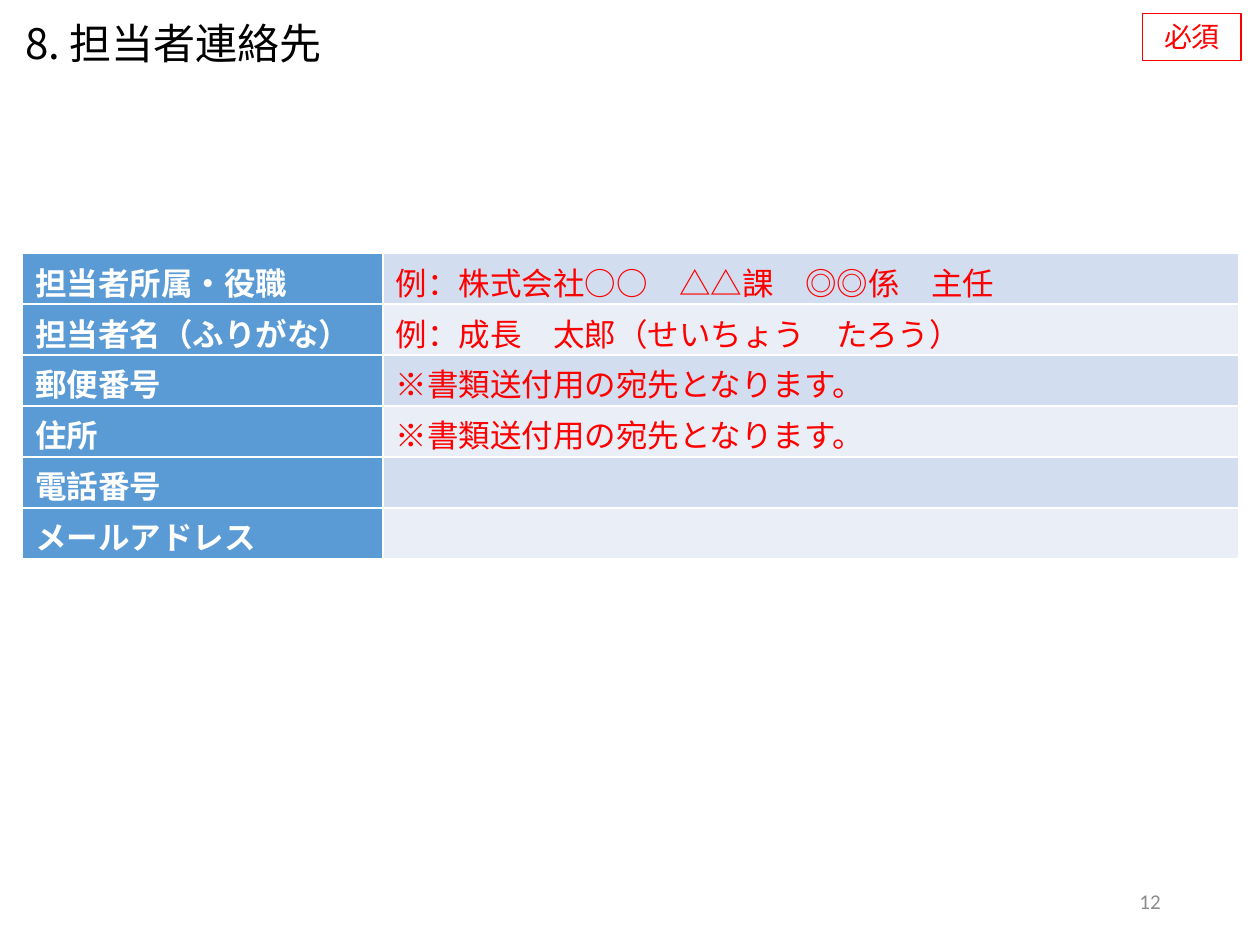
import pptx
import pptx.dml.color
import pptx.enum.shapes
import pptx.enum.text
import pptx.oxml
import pptx.oxml.ns
import pptx.util
from pptx.util import Inches

RGBColor = pptx.dml.color.RGBColor
ALIGN = pptx.enum.text.PP_ALIGN
ANCHOR = pptx.enum.text.MSO_ANCHOR
GROW = pptx.enum.text.MSO_AUTO_SIZE.SHAPE_TO_FIT_TEXT

WHITE = RGBColor(0xFF, 0xFF, 0xFF)
BLACK = RGBColor(0x00, 0x00, 0x00)
RED = RGBColor(0xFF, 0x00, 0x00)
GRAY = RGBColor(0x8C, 0x8C, 0x8C)
BLUE = RGBColor(0x5B, 0x9B, 0xD5)
BANDS = [RGBColor(0xD2, 0xDE, 0xEF), RGBColor(0xEA, 0xEF, 0xF7)]
JAPANESE = "Noto Sans CJK JP"

TITLE = "8. 担当者連絡先"
BADGE = "必須"
PAGE_NUMBER = "12"
CONTACT_ROWS = [
    ("担当者所属・役職", "例：株式会社○○　△△課　◎◎係　主任"),
    ("担当者名（ふりがな）", "例：成長　太郎（せいちょう　たろう）"),
    ("郵便番号", "※書類送付用の宛先となります。"),
    ("住所", "※書類送付用の宛先となります。"),
    ("電話番号", ""),
    ("メールアドレス", ""),
]
COLUMN_WIDTHS = [2.86, 6.79]
TABLE_HEIGHT = 2.43


def set_all(target, values):
    for name, value in values.items():
        setattr(target, name, value)


def write(frame, text, size, color, name=JAPANESE, bold=False, align=ALIGN.LEFT):
    para = frame.paragraphs[0]
    para.alignment = align
    span = para.add_run()
    span.text = text
    set_all(span.font, {"size": pptx.util.Pt(size), "name": name, "bold": bold})
    span.font.color.rgb = color
    east_asian = pptx.oxml.parse_xml(
        f'<a:ea {pptx.oxml.ns.nsdecls("a")} typeface="{name}"/>')
    span.font._element.find(pptx.oxml.ns.qn("a:latin")).addnext(east_asian)


def add_text(page, place, text, frame_format, **style):
    box = page.shapes.add_textbox(*map(Inches, place))
    set_all(box.text_frame, {"word_wrap": True, **frame_format})
    write(box.text_frame, text, **style)


def add_badge(page):
    badge = page.shapes.add_shape(
        pptx.enum.shapes.MSO_SHAPE.RECTANGLE,
        *map(Inches, (9.07, 0.11, 0.78, 0.37)))
    badge.shadow.inherit = False
    badge.fill.background()
    badge.line.color.rgb = RED
    badge.line.width = pptx.util.Pt(0.75)
    set_all(badge.text_frame, {
        "word_wrap": True, "auto_size": GROW, "vertical_anchor": ANCHOR.TOP})
    write(badge.text_frame, BADGE, 16, RED, align=ALIGN.CENTER)


def add_borders(cell):
    properties = cell._tc.get_or_add_tcPr()
    for index, side in enumerate(("lnL", "lnR", "lnT", "lnB")):
        properties.insert(index, pptx.oxml.parse_xml(
            f'<a:{side} {pptx.oxml.ns.nsdecls("a")} w="12700"><a:solidFill>'
            f'<a:srgbClr val="{WHITE}"/></a:solidFill></a:{side}>'))


def add_contacts(page):
    table = page.shapes.add_table(
        len(CONTACT_ROWS), len(COLUMN_WIDTHS), Inches(0.18), Inches(2.01),
        Inches(sum(COLUMN_WIDTHS)), Inches(TABLE_HEIGHT)).table
    set_all(table, {"first_row": False, "horz_banding": False})
    for column, width in zip(table.columns, COLUMN_WIDTHS):
        column.width = Inches(width)
    for row, texts in enumerate(CONTACT_ROWS):
        fills = [BLUE, BANDS[row % 2]]
        for column, text in enumerate(texts):
            cell = table.cell(row, column)
            set_all(cell, {"vertical_anchor": ANCHOR.MIDDLE,
                           "margin_top": Inches(0.04), "margin_bottom": 0})
            cell.fill.solid()
            cell.fill.fore_color.rgb = fills[column]
            add_borders(cell)
            if text:
                write(cell.text_frame, text, 18, (WHITE, RED)[column],
                      bold=column == 0)


def main():
    deck = pptx.Presentation()
    set_all(deck, {"slide_width": Inches(10), "slide_height": Inches(7.5)})
    page = deck.slides.add_slide(deck.slide_layouts[6])
    add_text(page, (7.06, 6.95, 2.25, 0.4), PAGE_NUMBER,
             {"vertical_anchor": ANCHOR.MIDDLE},
             size=12, color=GRAY, name="Calibri", align=ALIGN.RIGHT)
    add_text(page, (0.1, 0.09, 6.88, 0.5), TITLE, {"auto_size": GROW},
             size=24, color=BLACK)
    add_contacts(page)
    add_badge(page)
    deck.save("out.pptx")


if __name__ == "__main__":
    main()
